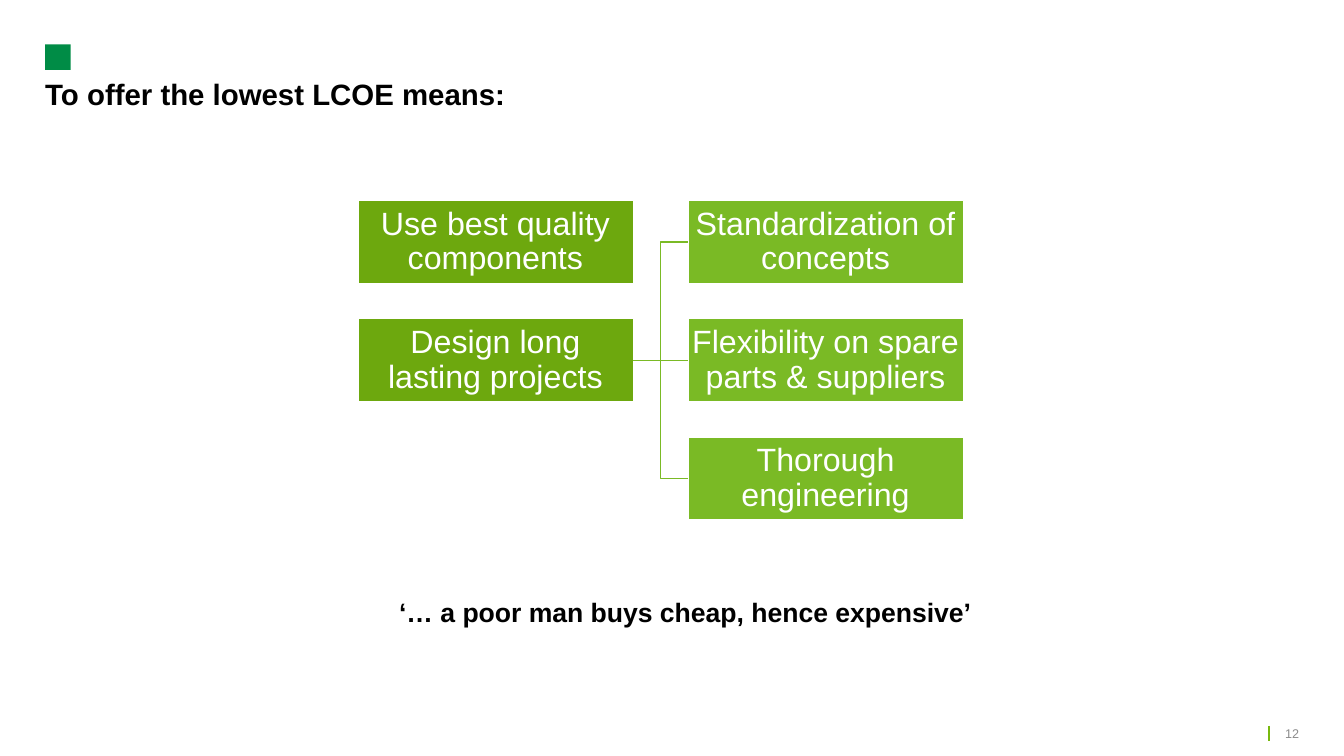
"""Build the slide on what offering the lowest LCOE means."""
from pptx import Presentation
from pptx.dml.color import RGBColor
from pptx.enum.shapes import MSO_CONNECTOR, MSO_SHAPE
from pptx.enum.text import MSO_ANCHOR, MSO_AUTO_SIZE, PP_ALIGN
from pptx.oxml.ns import qn
from pptx.util import Cm, Pt
from lxml import etree

RECT = MSO_SHAPE.RECTANGLE
STRAIGHT, ELBOW = MSO_CONNECTOR.STRAIGHT, MSO_CONNECTOR.ELBOW
TOP, MIDDLE = MSO_ANCHOR.TOP, MSO_ANCHOR.MIDDLE
LEFT, CENTER, RIGHT = PP_ALIGN.LEFT, PP_ALIGN.CENTER, PP_ALIGN.RIGHT
NO_FIT = MSO_AUTO_SIZE.NONE

TITLE = "To offer the lowest LCOE means:"
GOALS = ["Use best quality components", "Design long lasting projects"]
MEANS = [
    "Standardization of concepts",
    "Flexibility on spare parts & suppliers",
    "Thorough engineering",
]
QUOTE = "‘… a poor man buys cheap, hence expensive’"
PAGE = "12"

COLORS = {
    "black": "000000", "white": "FFFFFF", "grey": "8C8C8C", "logo": "008C46",
    "goal": "6DA80E", "mean": "7ABA25", "rule": "78B90F",
}
FONT = "Arial"
BOX_LEFT, BOX_TOP, BOX_W, BOX_H = 9.02, 5.05, 6.94, 2.1
COL_STEP, ROW_STEP = 8.32, 2.98


def rgb(name):
    return RGBColor.from_string(COLORS[name])


def write(sp, text, size, color, align=LEFT, anchor=TOP, bold=False, inset=0, wrap=True):
    tf = sp.text_frame
    tf.text = text
    tf.word_wrap = wrap
    tf.auto_size = NO_FIT
    tf.vertical_anchor = anchor
    tf.margin_left = tf.margin_right = tf.margin_top = tf.margin_bottom = Cm(inset)
    p = tf.paragraphs[0]
    p.alignment = align
    font = p.runs[0].font
    font.name, font.size, font.bold = FONT, Pt(size), bold
    font.color.rgb = rgb(color)
    return p


def add_rect(s, left, top, width, height, fill):
    sp = s.shapes.add_shape(RECT, Cm(left), Cm(top), Cm(width), Cm(height))
    sp.shadow.inherit = False
    sp.fill.solid()
    sp.fill.fore_color.rgb = rgb(fill)
    sp.line.fill.background()
    return sp


def add_column(s, labels, col, fill):
    boxes = []
    for row, label in enumerate(labels):
        sp = add_rect(s, BOX_LEFT + col * COL_STEP, BOX_TOP + row * ROW_STEP, BOX_W, BOX_H, fill)
        sp.line.color.rgb = rgb("white")
        sp.line.width = Pt(1)
        p = write(sp, label, 23, "white", CENTER, MIDDLE, inset=0.04)
        p.line_spacing = 0.9
        boxes.append(sp)
    return boxes


def add_line(s, kind, color, x1=0, y1=0, x2=0, y2=0):
    line = s.shapes.add_connector(kind, Cm(x1), Cm(y1), Cm(x2), Cm(y2))
    line.line.color.rgb = rgb(color)
    line.line.width = Pt(1)
    etree.SubElement(line._element.spPr, qn("a:effectLst"))
    return line


def main():
    prs = Presentation()
    prs.slide_width, prs.slide_height = Cm(33.87), Cm(19.05)
    s = prs.slides.add_slide(prs.slide_layouts[5])

    title = s.shapes.title
    title.left, title.top, title.width, title.height = Cm(1.14), Cm(1.93), Cm(31.6), Cm(1.8)
    write(title, TITLE, 21, "black", bold=True)
    add_rect(s, 1.14, 1.12, 0.64, 0.64, "logo")

    goals = add_column(s, GOALS, 0, "goal")
    means = add_column(s, MEANS, 1, "mean")
    source = goals[-1]
    for target in means:
        kind = STRAIGHT if target.top == source.top else ELBOW
        line = add_line(s, kind, "mean")
        line.begin_connect(source, 3)
        line.end_connect(target, 1)

    quote = s.shapes.add_textbox(Cm(10.06), Cm(15.01), Cm(15.19), Cm(1.12))
    write(quote, QUOTE, 19, "black", bold=True)

    add_line(s, STRAIGHT, "rule", 31.98, 18.29, 31.98, 18.67)
    page = s.shapes.add_textbox(Cm(32.13), Cm(18.24), Cm(0.61), Cm(0.51))
    write(page, PAGE, 9, "grey", RIGHT, MIDDLE, wrap=False)

    prs.save("out.pptx")


if __name__ == "__main__":
    main()
